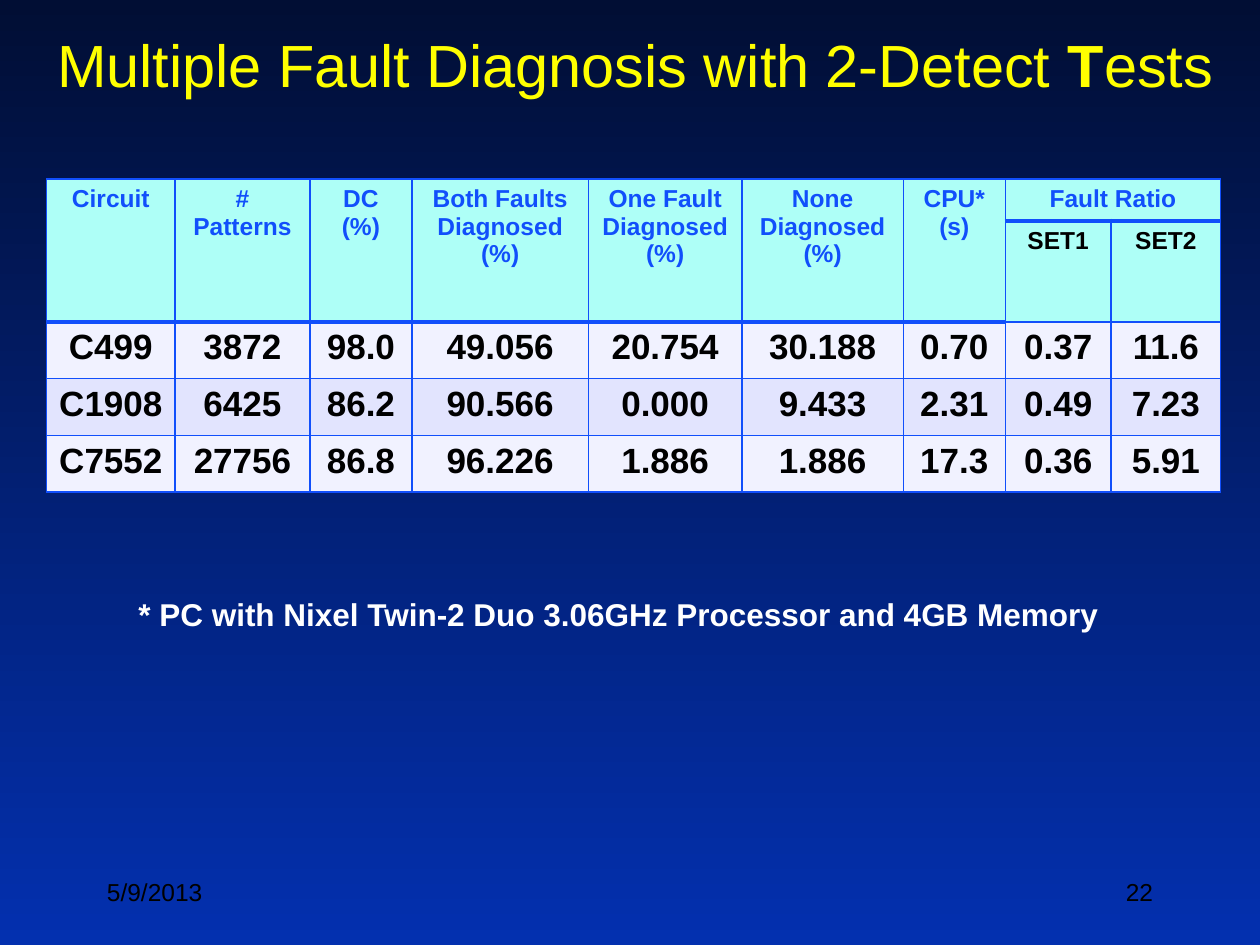
from pptx import Presentation
from pptx.dml.color import RGBColor as RGB
from pptx.enum.text import MSO_ANCHOR as Anchor, PP_ALIGN as Align
from pptx.oxml.ns import qn
from pptx.util import Inches, Pt
from lxml.etree import SubElement as Sub

NAVY = RGB(0x01, 0x0E, 0x34)
BLUE = RGB(0x03, 0x30, 0xAF)
EDGE = RGB(0x11, 0x4F, 0xFB)
AQUA = RGB(0xAE, 0xFF, 0xF7)
PALE = RGB(0xF1, 0xF2, 0xFF)
LILAC = RGB(0xE2, 0xE4, 0xFE)
YELLOW = RGB(0xFF, 0xFF, 0x00)
WHITE = RGB(0xFF, 0xFF, 0xFF)
BLACK = RGB(0, 0, 0)

WIDTHS = [1.02, 1.07, 0.81, 1.4, 1.22, 1.28, 0.81, 0.84, 0.87]
HEIGHTS = [0.32, 0.76, 0.45, 0.45, 0.45]
HEADS = ["Circuit", "# Patterns", "DC\n(%)", "Both Faults Diagnosed (%)",
         "One Fault Diagnosed (%)", "None Diagnosed (%)", "CPU* (s)", "Fault Ratio"]
SETS = ["SET1", "SET2"]
RATIO = HEADS.index("Fault Ratio")
DATA = [
    ["C499", "3872", "98.0", "49.056", "20.754", "30.188", "0.70", "0.37", "11.6"],
    ["C1908", "6425", "86.2", "90.566", "0.000", "9.433", "2.31", "0.49", "7.23"],
    ["C7552", "27756", "86.8", "96.226", "1.886", "1.886", "17.3", "0.36", "5.91"],
]


def style(frame, size, color, bold=False, align=Align.LEFT):
    for para in frame.paragraphs:
        para.alignment = align
        for run in para.runs:
            font = run.font
            font.name, font.size, font.bold = "Arial", Pt(size), bold
            font.color.rgb = color


def add_text(slide, box, text, size, color, bold=False, align=Align.LEFT, anchor=Anchor.TOP):
    frame = slide.shapes.add_textbox(*map(Inches, box)).text_frame
    frame.word_wrap = True
    frame.vertical_anchor = anchor
    frame.text = text
    style(frame, size, color, bold, align)
    return frame


def add_title(slide):
    frame = add_text(slide, (0.25, 0.17, 9.58, 1.25),
                     "Multiple Fault Diagnosis with 2-Detect ", 34, YELLOW)
    para = frame.paragraphs[0]
    for part in ("T", "ests"):
        para.add_run().text = part
    style(frame, 34, YELLOW, align=Align.CENTER)
    para.runs[1].font.bold = True


def set_edges(cell, top, bottom):
    props = cell._tc.get_or_add_tcPr()
    for side, width in (("L", 1), ("R", 1), ("T", top), ("B", bottom)):
        line = Sub(props, qn("a:ln" + side), w=str(Pt(width)))
        Sub(Sub(line, qn("a:solidFill")), qn("a:srgbClr"), val=str(EDGE))


def paint(cell, fill, top=1, bottom=1):
    set_edges(cell, top, bottom)
    cell.fill.solid()
    cell.fill.fore_color.rgb = fill


def fill_text(cell, text, size, color):
    cell.text = text
    style(cell.text_frame, size, color, True, Align.CENTER)


def add_heads(table):
    for col in range(len(WIDTHS)):
        ratio = col >= RATIO
        paint(table.cell(0, col), AQUA, bottom=3)
        paint(table.cell(1, col), AQUA, top=3 if ratio else 1, bottom=1 if ratio else 3)
        if not ratio:
            table.cell(0, col).merge(table.cell(1, col))
    table.cell(0, RATIO).merge(table.cell(0, RATIO + 1))
    for col, text in enumerate(HEADS):
        fill_text(table.cell(0, col), text, 14, EDGE)
    for col, text in enumerate(SETS, RATIO):
        fill_text(table.cell(1, col), text, 14, BLACK)


def add_data(table):
    for row, values in enumerate(DATA, 2):
        for col, text in enumerate(values):
            cell = table.cell(row, col)
            paint(cell, LILAC if row % 2 else PALE, top=3 if row == 2 and col < RATIO else 1)
            cell.margin_left = cell.margin_right = Inches(0.05)
            fill_text(cell, text, 20, BLACK)


def add_grid(slide):
    box = (0.37, 1.42, sum(WIDTHS), sum(HEIGHTS))
    table = slide.shapes.add_table(len(HEIGHTS), len(WIDTHS), *map(Inches, box)).table
    table.first_row = table.horz_banding = False
    for col, width in zip(table.columns, WIDTHS):
        col.width = Inches(width)
    for row, height in zip(table.rows, HEIGHTS):
        row.height = Inches(height)
    add_heads(table)
    add_data(table)


def set_back(slide):
    fill = slide.background.fill
    fill.gradient()
    fill.gradient_angle = 270
    for stop, color, place in zip(fill.gradient_stops, (NAVY, BLUE), (0, 1)):
        stop.color.rgb = color
        stop.position = place


def main():
    deck = Presentation()
    deck.slide_width, deck.slide_height = Inches(10), Inches(7.5)
    slide = deck.slides.add_slide(deck.slide_layouts[6])
    set_back(slide)
    add_title(slide)
    add_grid(slide)
    add_text(slide, (1, 4.67, 7.9, 0.4),
             "* PC with Nixel Twin-2 Duo 3.06GHz Processor and 4GB Memory", 18, WHITE, True)
    add_text(slide, (0.75, 6.83, 2.08, 0.5), "5/9/2013", 14, BLACK, anchor=Anchor.MIDDLE)
    add_text(slide, (7.17, 6.83, 2.08, 0.5), "22", 14, BLACK,
             align=Align.RIGHT, anchor=Anchor.MIDDLE)
    deck.save("out.pptx")


if __name__ == "__main__":
    main()
